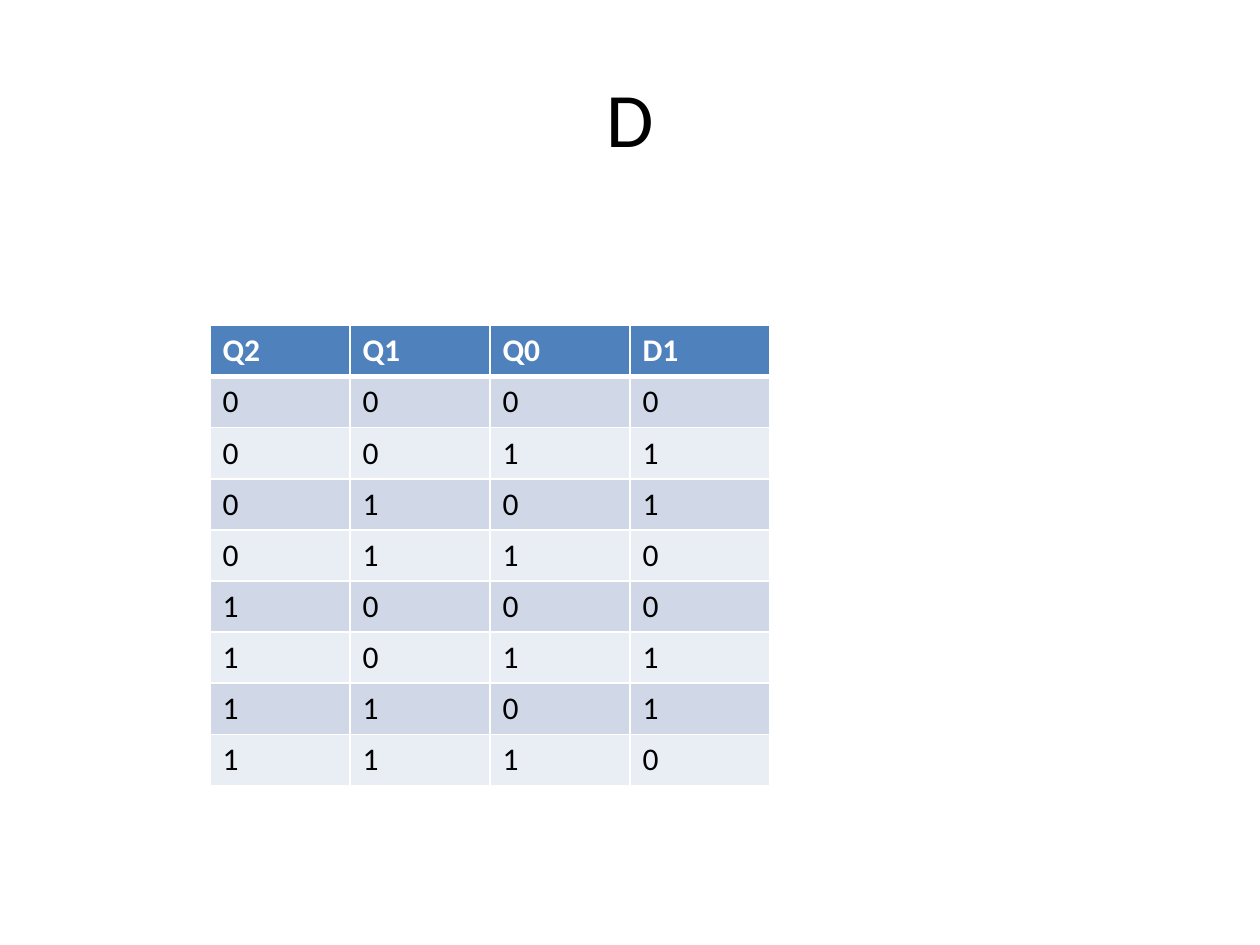
"""Build a slide with the truth table of the D1 input."""
import itertools
import lxml.etree
import pptx
import pptx.dml.color
import pptx.enum.text
import pptx.oxml.ns
import pptx.util

Pt = pptx.util.Pt
tag = pptx.oxml.ns.qn
hues = {"text": "000000", "head": "4F81BD", "odd": "D0D8E8",
        "even": "E9EDF4", "line": "FFFFFF"}


def write(para, text, size, hue, bold=False):
    run = para.add_run()
    run.text = text
    run.font.name = "Calibri"
    run.font.size = Pt(size)
    run.font.bold = bold
    run.font.color.rgb = pptx.dml.color.RGBColor.from_string(hues[hue])


def edge(cell, side, width):
    props = cell._tc.get_or_add_tcPr()
    line = lxml.etree.SubElement(props, tag("a:" + side), w=str(Pt(width)))
    fill = lxml.etree.SubElement(line, tag("a:solidFill"))
    lxml.etree.SubElement(fill, tag("a:srgbClr"), val=hues["line"])


deck = pptx.Presentation()
deck.slide_width, deck.slide_height = Pt(720), Pt(540)
slide = deck.slides.add_slide(deck.slide_layouts[6])

title = slide.shapes.add_textbox(Pt(36), Pt(21.6), Pt(648), Pt(90)).text_frame
title.word_wrap = True
title.vertical_anchor = pptx.enum.text.MSO_ANCHOR.MIDDLE
title.paragraphs[0].alignment = pptx.enum.text.PP_ALIGN.CENTER
write(title.paragraphs[0], "D", 44, "text")

rows = [("Q2", "Q1", "Q0", "D1")]
for q2, q1, q0 in itertools.product((0, 1), repeat=3):
    rows.append((q2, q1, q0, q1 ^ q0))

wide, high = 80, 29.2
table = slide.shapes.add_table(len(rows), 4, Pt(120), Pt(186),
                               Pt(4 * wide), Pt(len(rows) * high)).table
for col in table.columns:
    col.width = Pt(wide)
for r, row in enumerate(rows):
    table.rows[r].height = Pt(high)
    band = "head" if r == 0 else "odd" if r % 2 else "even"
    for c, value in enumerate(row):
        cell = table.cell(r, c)
        write(cell.text_frame.paragraphs[0], str(value), 18,
              "text" if r else "line", r == 0)
        edge(cell, "lnL", 1)
        edge(cell, "lnR", 1)
        edge(cell, "lnT", 3 if r == 1 else 1)
        edge(cell, "lnB", 3 if r == 0 else 1)
        cell.fill.solid()
        cell.fill.fore_color.rgb = pptx.dml.color.RGBColor.from_string(hues[band])

deck.save("out.pptx")
